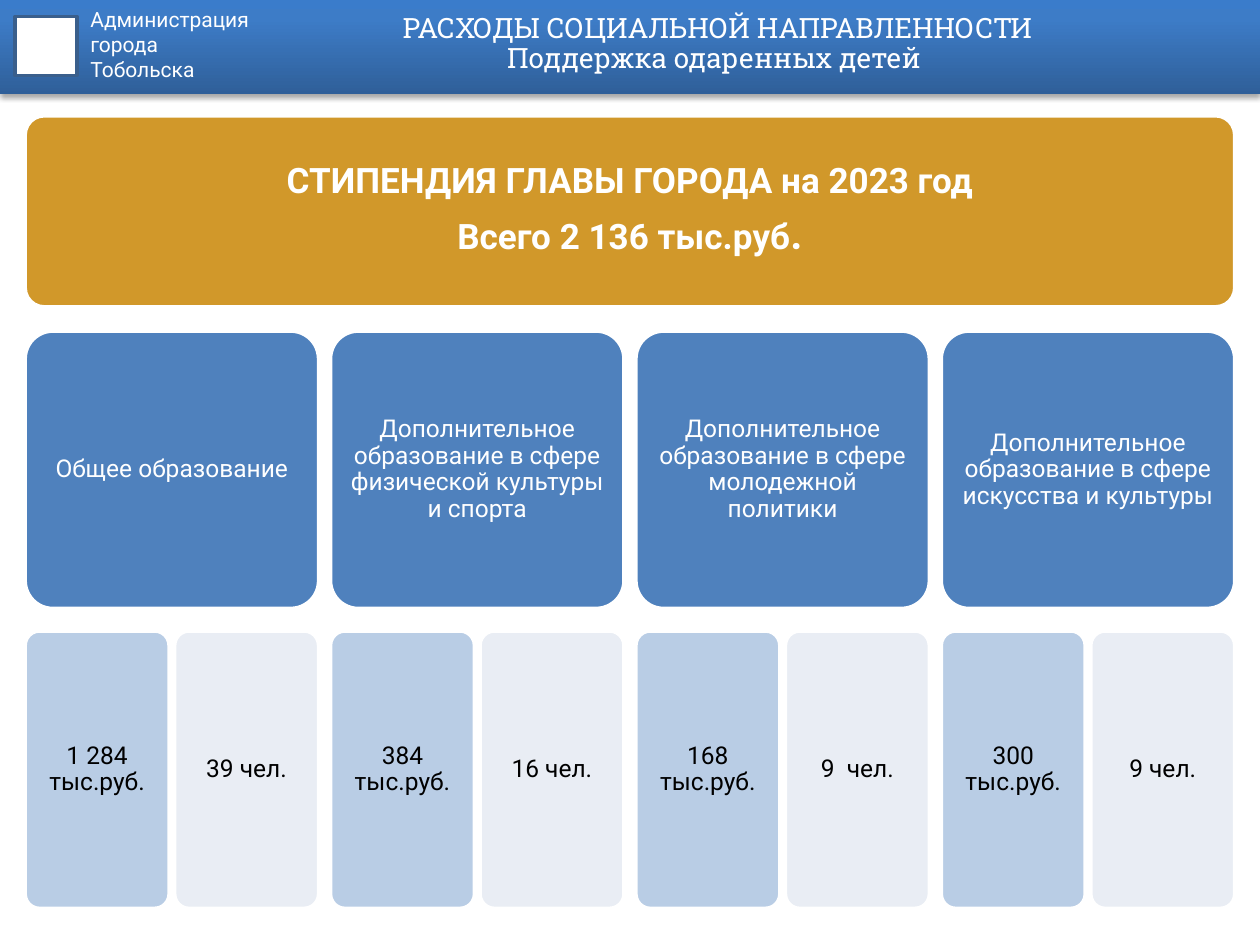
from lxml.etree import fromstring
from pptx import Presentation
from pptx.dml.color import RGBColor
from pptx.enum.shapes import MSO_SHAPE
from pptx.enum.text import MSO_ANCHOR, MSO_AUTO_SIZE, PP_ALIGN
from pptx.oxml.ns import nsdecls
from pptx.util import Pt

WHITE, BLACK = "FFFFFF", "000000"
GOLD, BLUE, PALE_BLUE, PALE_GREY = "D1982A", "4F81BD", "B9CDE5", "E9EDF4"
HEADER_STOPS = [(0, "2F5F99"), (80, "3D7CC7"), (100, "3A7CCB")]
CATEGORIES = [
    ("Общее образование", "1 284 тыс.руб.", "39 чел."),
    ("Дополнительное образование в сфере физической культуры и спорта",
     "384 тыс.руб.", "16 чел."),
    ("Дополнительное образование в сфере молодежной политики",
     "168 тыс.руб.", "9  чел."),
    ("Дополнительное образование в сфере искусства и культуры",
     "300 тыс.руб.", "9 чел."),
]


def color(value):
    """Turn a hex string into a colour."""
    return RGBColor.from_string(value)


def write(frame, paragraphs, size=14, font="Roboto", ink=WHITE, bold=False,
          align=PP_ALIGN.CENTER, anchor=MSO_ANCHOR.MIDDLE, spacing=0.9,
          gap=0, inset=None):
    """Fill a text frame with paragraphs, each a list of (text, size) or a string."""
    frame.word_wrap = True
    frame.auto_size = MSO_AUTO_SIZE.NONE
    frame.vertical_anchor = anchor
    if inset is not None:
        frame.margin_left = frame.margin_right = Pt(inset)
        frame.margin_top = frame.margin_bottom = Pt(inset)
    for index, content in enumerate(paragraphs):
        paragraph = frame.add_paragraph() if index else frame.paragraphs[0]
        paragraph.alignment = align
        paragraph.line_spacing = spacing
        paragraph.space_before = Pt(gap if index else 0)
        pieces = [(content, size)] if isinstance(content, str) else content
        for text, piece_size in pieces:
            for index_in_lines, line in enumerate(text.split("\n")):
                if index_in_lines:
                    paragraph.add_line_break()
                run = paragraph.add_run()
                run.text = line
                run.font.size = Pt(piece_size)
                run.font.name = font
                run.font.bold = bold
                run.font.color.rgb = color(ink)


def add_panel(slide, box, fill, outline=WHITE, kind=MSO_SHAPE.ROUNDED_RECTANGLE):
    """Add a filled, outlined shape without a shadow."""
    panel = slide.shapes.add_shape(kind, *map(Pt, box))
    panel.shadow.inherit = False
    panel.fill.solid()
    panel.fill.fore_color.rgb = color(fill)
    panel.line.color.rgb = color(outline)
    panel.line.width = Pt(2)
    if kind == MSO_SHAPE.ROUNDED_RECTANGLE:
        panel.adjustments[0] = 0.1
    return panel


def add_header_band(slide, box):
    """Add the gradient band with its soft shadow."""
    band = slide.shapes.add_shape(MSO_SHAPE.RECTANGLE, *map(Pt, box))
    band.shadow.inherit = False
    band.line.fill.background()
    stops = "".join(
        f'<a:gs pos="{position * 1000}"><a:srgbClr val="{value}"/></a:gs>'
        for position, value in HEADER_STOPS)
    gradient = fromstring(
        f'<a:gradFill {nsdecls("a")} rotWithShape="1"><a:gsLst>{stops}</a:gsLst>'
        '<a:lin ang="16200000" scaled="0"/></a:gradFill>')
    shadow = fromstring(
        f'<a:outerShdw {nsdecls("a")} blurRad="{Pt(3.1)}" dist="{Pt(1.8)}" '
        'dir="5400000" rotWithShape="0"><a:srgbClr val="000000">'
        '<a:alpha val="35000"/></a:srgbClr></a:outerShdw>')
    properties = band._element.spPr
    properties.find("{*}prstGeom").addnext(gradient)
    properties.find("{*}effectLst").append(shadow)


def add_header(slide, box):
    """Place the band, emblem, administration name and slide title."""
    left, top, width, height = box
    add_header_band(slide, box)
    add_panel(slide, (left + 8.6, top + 9.4, 35.3, 33.8), WHITE, "3A5F8C",
              MSO_SHAPE.RECTANGLE)
    office = slide.shapes.add_textbox(Pt(left + 44.6), Pt(top), Pt(168.5), Pt(65.5))
    write(office.text_frame, ["Администрация", "города", "Тобольска"], size=12,
          align=PP_ALIGN.LEFT, anchor=MSO_ANCHOR.TOP, spacing=1.0)
    title = slide.shapes.title
    slide.shapes._spTree.append(title._element)
    title.left, title.top = Pt(left + 172.8), Pt(top)
    title.width, title.height = Pt(474.5), Pt(51.1)
    write(title.text_frame,
          ["РАСХОДЫ СОЦИАЛЬНОЙ НАПРАВЛЕННОСТИ\nПоддержка одаренных детей "],
          size=16, font="Roboto Slab")


def add_banner(slide, box):
    """Place the scholarship total."""
    banner = add_panel(slide, box, GOLD)
    write(banner.text_frame,
          ["СТИПЕНДИЯ ГЛАВЫ ГОРОДА на 2023 год",
           [("Всего 2 136 тыс.руб", 20), (".", 24)]],
          size=20, bold=True, gap=7, inset=6)


def add_category(slide, box, category, row_gap=12.9, column_gap=3.2):
    """Place a category above its amount and number of people."""
    left, top, width, height = box
    name, amount, people = category
    row_height = (height - row_gap) / 2
    half_width = (width - column_gap) / 2
    lower_top = top + row_height + row_gap
    cards = [
        (name, (left, top, width, row_height), BLUE, WHITE),
        (amount, (left, lower_top, half_width, row_height), PALE_BLUE, BLACK),
        (people, (left + half_width + column_gap, lower_top, half_width, row_height),
         PALE_GREY, BLACK),
    ]
    for text, card_box, fill, ink in cards:
        card = add_panel(slide, card_box, fill)
        write(card.text_frame, [text], ink=ink, inset=4.2)


def add_categories(slide, box, gap=6.8):
    """Spread the categories evenly over the box."""
    left, top, width, height = box
    column_width = (width - gap * (len(CATEGORIES) - 1)) / len(CATEGORIES)
    for index, category in enumerate(CATEGORIES):
        column_left = left + index * (column_width + gap)
        add_category(slide, (column_left, top, column_width, height), category)


def main():
    """Build and save the slide."""
    presentation = Presentation()
    presentation.slide_width, presentation.slide_height = Pt(720), Pt(540)
    slide = presentation.slides.add_slide(presentation.slide_layouts[5])
    add_header(slide, (0, 0, 720, 54))
    add_banner(slide, (14.4, 66.2, 691.2, 109.2))
    add_categories(slide, (14.4, 189.2, 691.2, 329.9))
    presentation.save("out.pptx")


if __name__ == "__main__":
    main()
